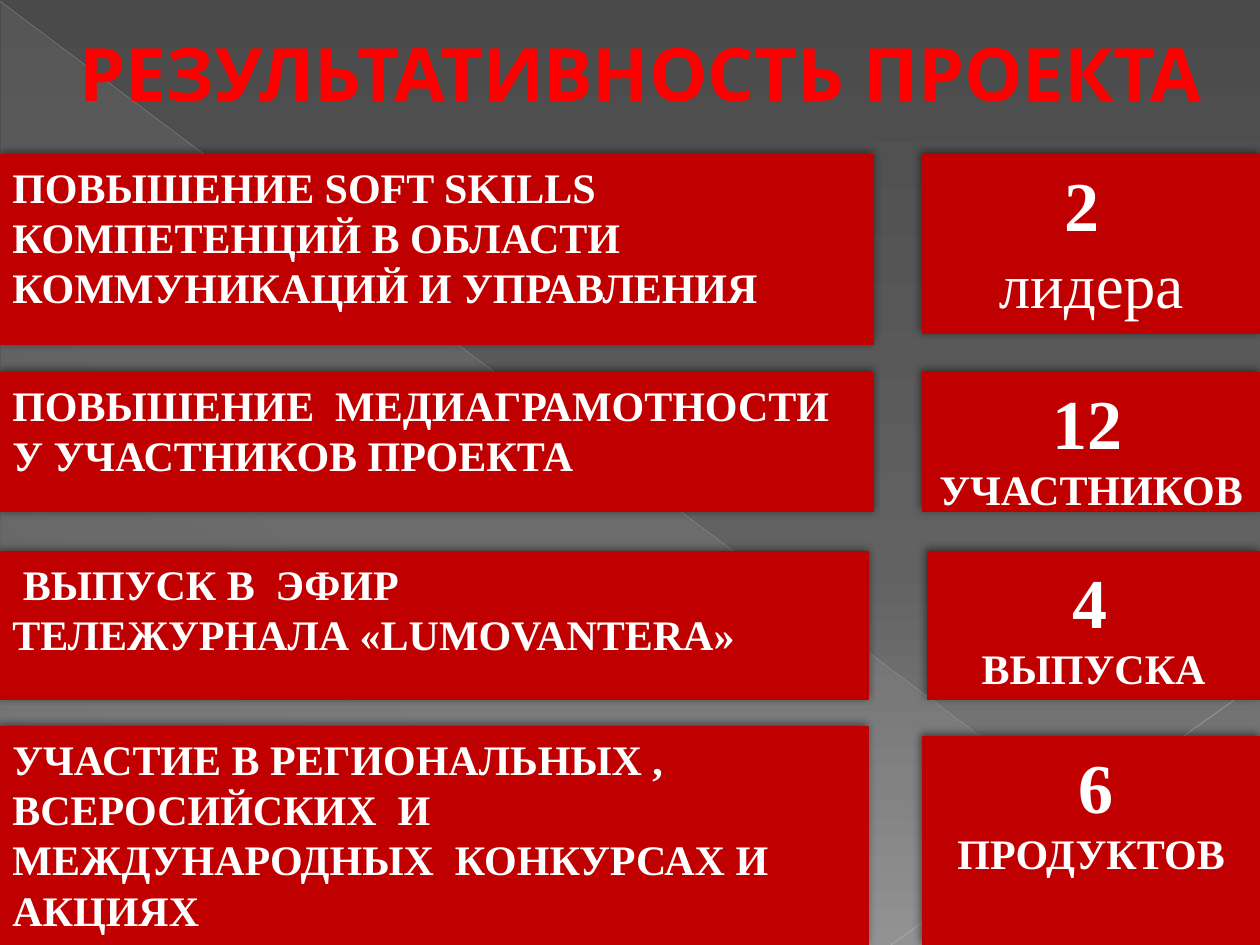
from lxml.etree import SubElement
from pptx import Presentation
from pptx.dml.color import RGBColor
from pptx.enum.shapes import MSO_CONNECTOR as CONNECTOR, MSO_SHAPE as SHAPE
from pptx.enum.text import MSO_ANCHOR as ANCHOR, MSO_AUTO_SIZE as AUTO_SIZE, PP_ALIGN as ALIGN
from pptx.oxml.ns import qn
from pptx.util import Inches, Pt

BRIGHT_RED = RGBColor(0xFF, 0x00, 0x00)
CARD_RED = RGBColor(0xC0, 0x00, 0x00)
TITLE_EDGE = RGBColor(0xB1, 0x27, 0x61)
WHITE = RGBColor(0xFF, 0xFF, 0xFF)
BLACK = RGBColor(0x00, 0x00, 0x00)
DARK_GREY = RGBColor(0x4A, 0x4A, 0x4A)
MID_GREY = RGBColor(0x62, 0x62, 0x62)
LIGHT_GREY = RGBColor(0x8C, 0x8C, 0x8C)
SHEEN = RGBColor(0xD2, 0xD2, 0xD2)
LONG_LINE = RGBColor(0xBF, 0xBF, 0xBF)
SHORT_LINE = RGBColor(0xC6, 0xC6, 0xC6)

BODY_FONT = "Times New Roman"
TITLE_FONT = "League Spartan"

# Each row: goal box, goal lines, result box, result lines of (text, size, bold) runs
SPACE = (" ", 24, True)
ROWS = [
    ((0, 1.23, 6.93, 1.5),
     ["ПОВЫШЕНИЕ SOFT SKILLS КОМПЕТЕНЦИЙ В ОБЛАСТИ КОММУНИКАЦИЙ И УПРАВЛЕНИЯ"],
     (7.32, 1.23, 2.68, 1.42),
     [[("2 ", 40, True)], [("лидера", 36, False)]]),
    ((0, 2.96, 6.93, 1.1),
     ["ПОВЫШЕНИЕ  МЕДИАГРАМОТНОСТИ", "У УЧАСТНИКОВ ПРОЕКТА"],
     (7.32, 2.96, 2.68, 1.1),
     [[SPACE, ("12 ", 40, True)], [("УЧАСТНИКОВ", 24, True)]]),
    ((0, 4.38, 6.89, 1.17),
     [" ВЫПУСК В  ЭФИР", "ТЕЛЕЖУРНАЛА «LUMOVANTERA»"],
     (7.36, 4.38, 2.64, 1.17),
     [[SPACE, ("4 ", 40, True)], [("ВЫПУСКА", 24, True)]]),
    ((0, 5.77, 6.89, 1.73),
     ["УЧАСТИЕ В РЕГИОНАЛЬНЫХ , ВСЕРОСИЙСКИХ  И МЕЖДУНАРОДНЫХ  КОНКУРСАХ И АКЦИЯХ"],
     (7.32, 5.85, 2.68, 1.65),
     [[SPACE, ("6 ", 40, True), ("ПРОДУКТОВ", 24, True)]]),
]


def add_color(parent, color, opacity=100):
    node = SubElement(parent, qn("a:srgbClr"), val=str(color))
    if opacity < 100:
        SubElement(node, qn("a:alpha"), val=str(opacity * 1000))


def set_gradient(fill, owner, stops, angle):
    """Give the owner element a linear gradient of (position, color, opacity) stops."""
    fill.gradient()
    gradient = next(owner.iter(qn("a:gradFill")))
    stop_list = gradient.find(qn("a:gsLst"))
    for old_stop in list(stop_list):
        stop_list.remove(old_stop)
    for position, color, opacity in stops:
        stop = SubElement(stop_list, qn("a:gs"), pos=str(position * 1000))
        add_color(stop, color, opacity)
    gradient.find(qn("a:lin")).set("ang", str(angle * 60000))


def add_text(paragraph, text, size=24, bold=True, font=BODY_FONT, color=WHITE):
    run = paragraph.add_run()
    run.text = text
    run.font.size = Pt(size)
    run.font.bold = bold
    run.font.name = font
    run.font.color.rgb = color
    return run


def add_thin_line(slide, start, end, color, width, opacity):
    line = slide.shapes.add_connector(CONNECTOR.STRAIGHT, *map(Inches, start + end))
    line.line.width = Pt(width)
    line.line.color.rgb = color
    SubElement(next(line.element.spPr.iter(qn("a:srgbClr"))),
               qn("a:alpha"), val=str(opacity * 1000))
    SubElement(line.element.spPr, qn("a:effectLst"))


def draw_backdrop(slide, box):
    set_gradient(slide.background.fill, slide.element,
                 [(0, DARK_GREY, 100), (60, MID_GREY, 100), (100, LIGHT_GREY, 100)], 90)
    # Faint triangle and diagonals
    sheen = slide.shapes.add_shape(SHAPE.RIGHT_TRIANGLE, *map(Inches, box))
    sheen.shadow.inherit = False
    set_gradient(sheen.fill, sheen.element.spPr,
                 [(0, SHEEN, 10), (70, SHEEN, 8), (100, SHEEN, 1)], 133)
    sheen.line.fill.background()
    left, top, width, height = box
    right, bottom = left + width, top + height
    add_thin_line(slide, (0, 0.01), (right, bottom), LONG_LINE, 0.39, 35)
    add_thin_line(slide, (10, 5.41), (7.07, bottom), SHORT_LINE, 0.47, 45)


def place_title(slide, box):
    title = slide.shapes.title
    title.left, title.top, title.width, title.height = map(Inches, box)
    frame = title.text_frame
    frame.word_wrap = True
    frame.auto_size = AUTO_SIZE.NONE
    frame.vertical_anchor = ANCHOR.MIDDLE
    paragraph = frame.paragraphs[0]
    paragraph.alignment = ALIGN.LEFT
    properties = paragraph._p.get_or_add_pPr()
    properties.set("marL", str(Inches(0.53)))
    properties.set("indent", "0")
    run = add_text(paragraph, "РЕЗУЛЬТАТИВНОСТЬ ПРОЕКТА", size=42,
                   font=TITLE_FONT, color=BRIGHT_RED)
    # Letter outline, which must precede the letter fill
    run_properties = run.font._element
    outline = SubElement(run_properties, qn("a:ln"), w=str(Pt(0.5)))
    add_color(SubElement(outline, qn("a:solidFill")), TITLE_EDGE)
    run_properties.insert(0, outline)
    # Bring the title in front of the backdrop
    slide.shapes.element.append(title.element)


def draw_card(slide, box, lines, alignment):
    card = slide.shapes.add_shape(SHAPE.RECTANGLE, *map(Inches, box))
    card.fill.solid()
    card.fill.fore_color.rgb = CARD_RED
    card.line.color.rgb = CARD_RED
    card.line.width = Pt(0.75)
    # Soft shadow
    card.shadow.inherit = False
    effects = card.element.spPr.find(qn("a:effectLst"))
    shadow = SubElement(effects, qn("a:outerShdw"), blurRad=str(Pt(5)), dist=str(Pt(2)),
                        dir=str(245 * 60000), rotWithShape="0")
    add_color(shadow, BLACK, 50)
    # Text
    frame = card.text_frame
    frame.word_wrap = True
    frame.vertical_anchor = ANCHOR.TOP
    for index, runs in enumerate(lines):
        paragraph = frame.add_paragraph() if index else frame.paragraphs[0]
        paragraph.alignment = alignment
        for text, size, bold in runs:
            add_text(paragraph, text, size=size, bold=bold)


def main():
    deck = Presentation()
    deck.slide_width, deck.slide_height = Inches(10), Inches(7.5)
    slide = deck.slides.add_slide(deck.slide_layouts[5])
    draw_backdrop(slide, (0.01, 0.02, 9.98, 7.48))
    place_title(slide, (0, -0.19, 10, 1.53))
    for goal_box, goal_lines, result_box, result_lines in ROWS:
        goal_runs = [[(line, 24, True)] for line in goal_lines]
        draw_card(slide, goal_box, goal_runs, ALIGN.LEFT)
        draw_card(slide, result_box, result_lines, ALIGN.CENTER)
    deck.save("out.pptx")


if __name__ == "__main__":
    main()
